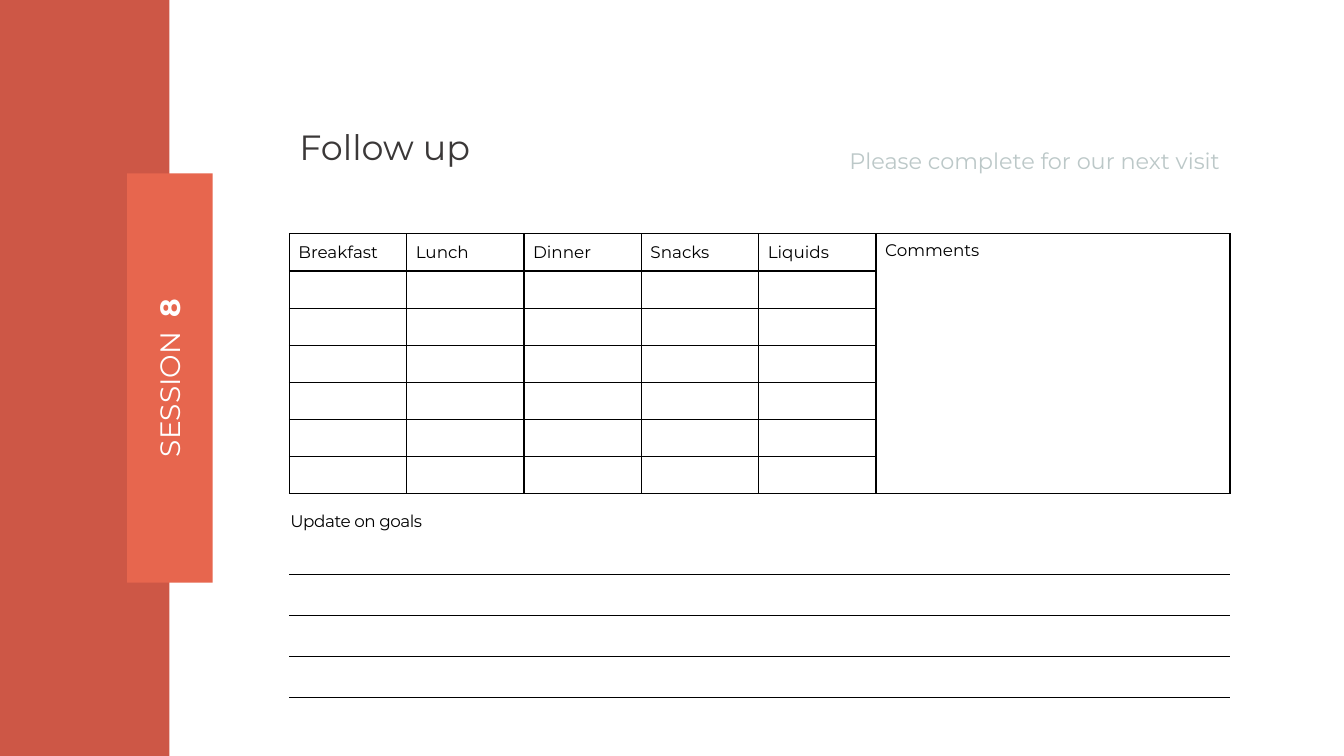
from dataclasses import dataclass

import pptx
import pptx.dml.color
import pptx.enum.shapes
import pptx.enum.text
import pptx.oxml
import pptx.oxml.ns
import pptx.slide
import pptx.table
import pptx.text.text
import pptx.util

Inches = pptx.util.Inches
Align = pptx.enum.text.PP_ALIGN
Anchor = pptx.enum.text.MSO_ANCHOR

FONT = "Montserrat"
COLORS = {
    "band": "CD5746",
    "tab": "E7664E",
    "white": "FFFFFF",
    "title": "3B3838",
    "hint": "BCC8C8",
    "ink": "000000",
}
MEALS = ["Breakfast", "Lunch", "Dinner", "Snacks", "Liquids"]
CONTENT_LEFT, CONTENT_WIDTH = 2.87, 9.33
COMMENTS_WIDTH = 3.51
DIARY_ROWS, DIARY_HEIGHT = 7, 2.58
GOAL_ROWS, GOAL_HEIGHT = 3, 1.22
CELL_INDENT = 0.09


@dataclass
class Box:
    left: float
    top: float
    width: float
    height: float

    def lengths(self) -> list[pptx.util.Length]:
        return [Inches(side) for side in (self.left, self.top, self.width, self.height)]


@dataclass
class Panel:
    box: Box
    color: str


@dataclass
class Label:
    text: str
    box: Box
    size: float
    color: str
    align: Align = Align.LEFT
    inset: bool = True
    wrap: bool = True
    rotation: float = 0
    line_points: float | None = None
    spacing: int = 0


PANELS = [
    Panel(Box(0, 0, 1.68, 7.5), "band"),
    Panel(Box(1.26, 1.72, 0.85, 4.06), "tab"),
]
TITLE = Label("Follow up", Box(CONTENT_LEFT, 1.19, 2.91, 0.52), 25, "title")
SESSION = Label("SESSION", Box(0.79, 3.53, 1.78, 0.44), 20, "white",
                align=Align.CENTER, wrap=False, rotation=270)
LABELS = [
    Label("Please complete for our next visit", Box(8.21, 1.19, 3.99, 0.52), 16,
          "hint", align=Align.RIGHT, line_points=35),
    Label("Update on goals", Box(CONTENT_LEFT + 0.01, 5.07, 2.2, 0.16), 12,
          "ink", inset=False, spacing=-30),
]


def format_run(run: pptx.text.text._Run, size: float, color: str, spacing: int = 0) -> None:
    run.font.name = FONT
    run.font.size = pptx.util.Pt(size)
    run.font.color.rgb = pptx.dml.color.RGBColor.from_string(COLORS[color])
    if spacing:
        run.font._element.set("spc", str(spacing))


def add_panel(slide: pptx.slide.Slide, panel: Panel) -> None:
    shape = slide.shapes.add_shape(
        pptx.enum.shapes.MSO_SHAPE.RECTANGLE, *panel.box.lengths())
    shape.shadow.inherit = False
    shape.fill.solid()
    shape.fill.fore_color.rgb = pptx.dml.color.RGBColor.from_string(COLORS[panel.color])
    shape.line.fill.background()


def write_label(shape, label: Label) -> pptx.text.text._Paragraph:
    shape.left, shape.top, shape.width, shape.height = label.box.lengths()
    shape.rotation = label.rotation
    frame = shape.text_frame
    frame.text = label.text
    frame.word_wrap = label.wrap
    frame.auto_size = pptx.enum.text.MSO_AUTO_SIZE.NONE
    frame.vertical_anchor = Anchor.TOP
    if not label.inset:
        frame.margin_left = frame.margin_right = 0
        frame.margin_top = frame.margin_bottom = 0
    paragraph = frame.paragraphs[0]
    paragraph.alignment = label.align
    if label.line_points:
        paragraph.line_spacing = pptx.util.Pt(label.line_points)
    format_run(paragraph.runs[0], label.size, label.color, label.spacing)
    return paragraph


def add_label(slide: pptx.slide.Slide, label: Label) -> pptx.text.text._Paragraph:
    return write_label(slide.shapes.add_textbox(*label.box.lengths()), label)


def set_borders(cell: pptx.table._Cell, drawn: str) -> None:
    properties = cell._tc.get_or_add_tcPr()
    for index, side in enumerate("LRTB"):
        fill = (f'<a:solidFill><a:srgbClr val="{COLORS["ink"]}"/></a:solidFill>'
                if side in drawn else "<a:noFill/>")
        namespace = pptx.oxml.ns.nsdecls("a")
        border = pptx.oxml.parse_xml(
            f'<a:ln{side} {namespace} w="12700">{fill}</a:ln{side}>')
        properties.insert(index, border)


def add_plain_table(slide: pptx.slide.Slide, box: Box, rows: int,
                    widths: list[float], borders: str) -> pptx.table.Table:
    table = slide.shapes.add_table(rows, len(widths), *box.lengths()).table
    table.first_row = table.horz_banding = False
    for column, width in zip(table.columns, widths):
        column.width = Inches(width)
    for row in table.rows:
        row.height = Inches(box.height / rows)
    for cell in table.iter_cells():
        cell.fill.background()
        cell.margin_left = Inches(CELL_INDENT)
        cell.margin_right = cell.margin_top = cell.margin_bottom = 0
        cell.vertical_anchor = Anchor.MIDDLE
        set_borders(cell, borders)
    return table


def main() -> None:
    presentation = pptx.Presentation()
    presentation.slide_width, presentation.slide_height = Inches(13.33), Inches(7.5)
    slide = presentation.slides.add_slide(presentation.slide_layouts.get_by_name("Title Only"))

    # Side band with the session tab
    for panel in PANELS:
        add_panel(slide, panel)
    session = add_label(slide, SESSION)
    for text, spacing in ((" ", 500), ("8", 0)):
        run = session.add_run()
        run.text = text
        format_run(run, SESSION.size, SESSION.color, spacing)
    session.runs[-1].font.bold = True

    # Title and other labels
    write_label(slide.shapes.title, TITLE)
    for label in LABELS:
        add_label(slide, label)

    # Food diary with a comments column
    meal_width = (CONTENT_WIDTH - COMMENTS_WIDTH) / len(MEALS)
    diary = add_plain_table(
        slide, Box(CONTENT_LEFT, 2.32, CONTENT_WIDTH, DIARY_HEIGHT), DIARY_ROWS,
        [meal_width] * len(MEALS) + [COMMENTS_WIDTH], "LRTB")
    for column, heading in enumerate(MEALS + ["Comments"]):
        cell = diary.cell(0, column)
        cell.text = heading
        format_run(cell.text_frame.paragraphs[0].runs[0], 12, "ink")
    comments = diary.cell(0, len(MEALS))
    comments.merge(diary.cell(DIARY_ROWS - 1, len(MEALS)))
    comments.vertical_anchor = Anchor.TOP
    comments.margin_top = Inches(0.06)

    # Writing lines for the goals
    add_plain_table(slide, Box(CONTENT_LEFT, 5.7, CONTENT_WIDTH, GOAL_HEIGHT),
                    GOAL_ROWS, [CONTENT_WIDTH], "TB")

    presentation.save("out.pptx")


if __name__ == "__main__":
    main()
